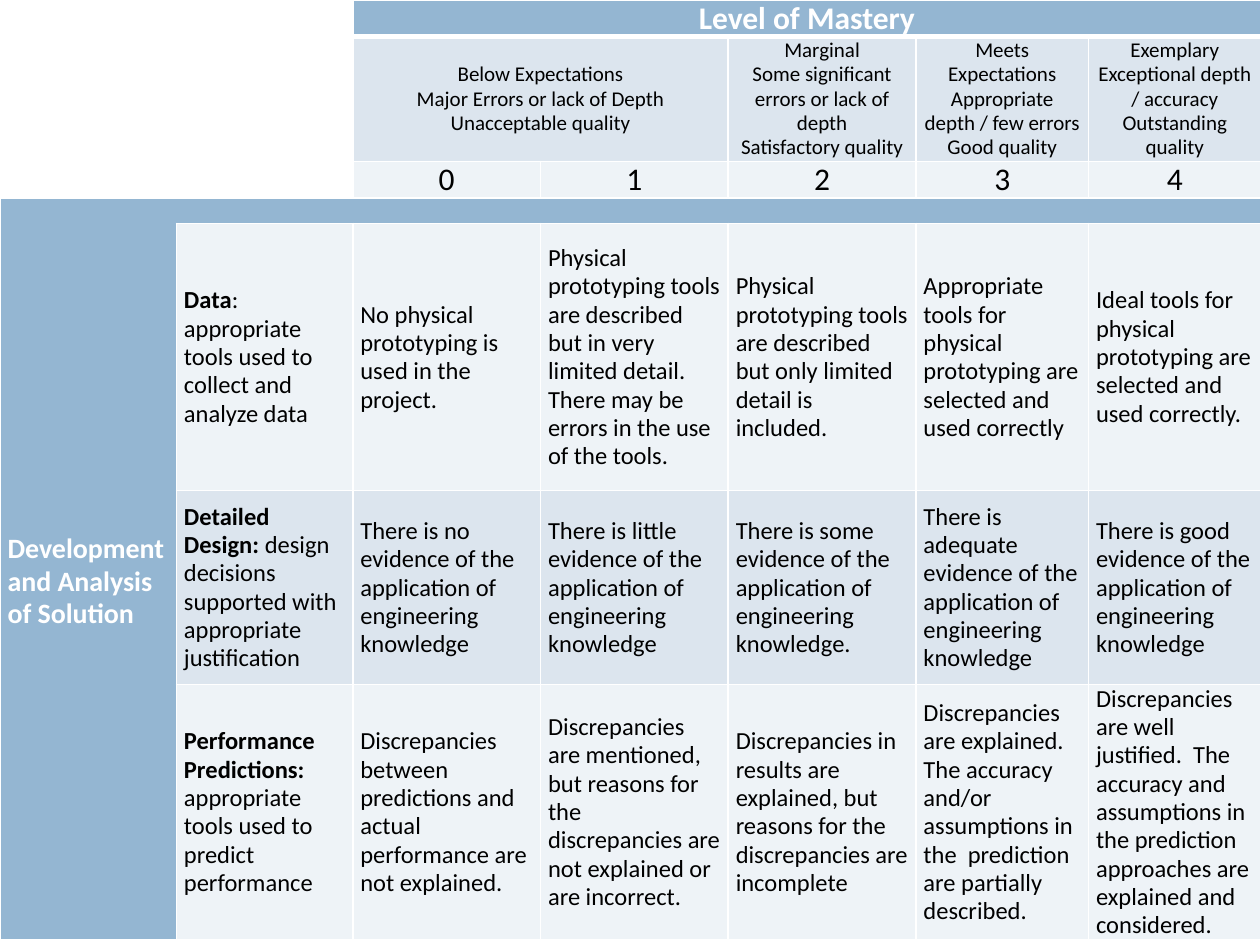
"""Build a one-slide grading rubric as a table of mastery levels."""
from lxml import etree
from pptx import Presentation, util as u
from pptx.dml.color import RGBColor
from pptx.enum import text
from pptx.oxml import ns

HEADING = "Level of Mastery"
SECTION = "Development and Analysis of Solution"
EXPECTATIONS = [
    (2, ["Below Expectations", "Major Errors or lack of Depth", "Unacceptable quality"]),
    (4, ["Marginal", "Some significant errors or lack of depth", "Satisfactory quality"]),
    (5, ["Meets Expectations", "Appropriate depth / few errors", "Good quality"]),
    (6, ["Exemplary", "Exceptional depth / accuracy", "Outstanding quality"]),
]
SCORES = ["0", "1", "2", "3", "4"]
CRITERIA = [
    ("Data", ": appropriate tools used to collect and analyze data", [
        "No physical prototyping is used in the project.",
        "Physical prototyping tools are described but in very limited detail.  "
        "There may be errors in the use of the tools.",
        "Physical prototyping tools are described but only limited detail is included.",
        "Appropriate tools for physical prototyping are selected and used correctly",
        "Ideal tools for physical prototyping are selected and used correctly.",
    ]),
    ("Detailed Design:", " design decisions supported with appropriate justification", [
        "There is no evidence of the application of engineering knowledge",
        "There is little evidence of the application of engineering knowledge",
        "There is some evidence of the application of engineering knowledge.",
        "There is adequate evidence of the application of engineering knowledge",
        "There is good evidence of the application of engineering knowledge",
    ]),
    ("Performance Predictions: ", "appropriate tools used to predict performance", [
        "Discrepancies between predictions and actual performance are not explained.",
        "Discrepancies are mentioned, but reasons for the discrepancies are not "
        "explained or are incorrect.",
        "Discrepancies in results are explained, but reasons for the discrepancies "
        "are incomplete",
        "Discrepancies are explained.  The accuracy and/or assumptions in the  "
        "prediction are partially described.",
        "Discrepancies are well justified.  The accuracy and assumptions in the "
        "prediction approaches are explained and considered.",
    ]),
]

COLORS = {"accent": "94B6D2", "band": "DCE5EE", "pale": "EEF3F7",
          "white": "FFFFFF", "black": "000000"}
COLUMNS = [1.4, 1.4, 1.49, 1.49, 1.49, 1.37, 1.37]
ROWS = [0.28, 0.99, 0.28, 0.19, 2.12, 1.54, 2.0]
ROW_FILLS = ["accent", "band", "pale", "accent", "pale", "band", "pale"]
MERGES = [((0, 0), (2, 1)), ((0, 2), (0, 6)), ((1, 2), (1, 3)),
          ((3, 0), (3, 6)), ((4, 0), (6, 0))]
FIRST_LEVEL, SCORE_ROW, BAND_ROW, FIRST_CRITERION = 2, 2, 3, 4

CENTER, LEFT = text.PP_ALIGN.CENTER, text.PP_ALIGN.LEFT
HEADING_STYLE = {"size": 18, "color": "white", "bold": True, "align": CENTER, "after": 6}
EXPECTATION_STYLE = {"size": 12, "align": CENTER, "after": 0}
SCORE_STYLE = {"size": 18, "align": CENTER, "after": 0}
SECTION_STYLE = {"size": 16, "color": "white", "bold": True, "align": LEFT, "after": 6}
BODY_STYLE = {"size": 14, "align": LEFT, "after": 6}
CELL_FORMAT = {"margin_left": u.Inches(0.06), "margin_right": u.Inches(0.06),
               "margin_top": 0, "margin_bottom": 0,
               "vertical_anchor": text.MSO_ANCHOR.MIDDLE}


def rgb(name):
    return RGBColor.from_string(COLORS[name])


def write(cell, paragraphs, style):
    """Fill a cell; each paragraph is a list of (text, bold) runs."""
    frame = cell.text_frame
    for index, runs in enumerate(paragraphs):
        paragraph = frame.add_paragraph() if index else frame.paragraphs[0]
        layout = {"alignment": style["align"], "line_spacing": 0.95,
                  "space_before": u.Pt(0), "space_after": u.Pt(style["after"])}
        for key, value in layout.items():
            setattr(paragraph, key, value)
        for words, bold in runs:
            run = paragraph.add_run()
            run.text = words
            font = {"name": "Calibri", "size": u.Pt(style["size"]), "bold": bold}
            for key, value in font.items():
                setattr(run.font, key, value)
            run.font.color.rgb = rgb(style.get("color", "black"))


def write_plain(cell, lines, style):
    write(cell, [[(line, style.get("bold", False))] for line in lines], style)


def add_borders(cell, widths):
    """Draw white cell edges; a width of zero hides the edge."""
    properties = cell._tc.get_or_add_tcPr()
    for position, (edge, width) in enumerate(widths.items()):
        line = etree.Element(ns.qn(f"a:ln{edge}"), w=str(u.Pt(width)))
        if width:
            fill = etree.SubElement(line, ns.qn("a:solidFill"))
            etree.SubElement(fill, ns.qn("a:srgbClr"), val=COLORS["white"])
        else:
            etree.SubElement(line, ns.qn("a:noFill"))
        properties.insert(position, line)


def format_cell(cell, row, column):
    in_corner = row < BAND_ROW and column < FIRST_LEVEL
    in_section = row >= FIRST_CRITERION and column == 0
    for key, value in CELL_FORMAT.items():
        setattr(cell, key, value)
    cell.fill.solid()
    fill = "white" if in_corner else "accent" if in_section else ROW_FILLS[row]
    cell.fill.fore_color.rgb = rgb(fill)
    widths = dict.fromkeys("LRTB", 0 if in_corner else 1)
    if row == 0 and not in_corner:
        widths["B"] = 3
    if row == 1 and not in_corner:
        widths["T"] = 3
    if row == BAND_ROW:
        widths["B"] = 0
    if in_section:
        widths["T"] = 0
    add_borders(cell, widths)
    if not cell.text_frame.text:
        empty = cell.text_frame.paragraphs[0]._p
        etree.SubElement(empty, ns.qn("a:endParaRPr"), sz="1200")


def main():
    deck = Presentation()
    deck.slide_width, deck.slide_height = u.Inches(10), u.Inches(7.5)
    slide = deck.slides.add_slide(deck.slide_layouts[6])
    rubric = slide.shapes.add_table(len(ROWS), len(COLUMNS), 0, 0,
                                    u.Inches(10), u.Inches(sum(ROWS))).table
    rubric.first_row = rubric.horz_banding = False
    for column, width in zip(rubric.columns, COLUMNS):
        column.width = u.Inches(width)
    for row, height in zip(rubric.rows, ROWS):
        row.height = u.Inches(height)
    for start, end in MERGES:
        rubric.cell(*start).merge(rubric.cell(*end))

    write_plain(rubric.cell(0, FIRST_LEVEL), [HEADING], HEADING_STYLE)
    write_plain(rubric.cell(FIRST_CRITERION, 0), [SECTION], SECTION_STYLE)
    for column, lines in EXPECTATIONS:
        write_plain(rubric.cell(1, column), lines, EXPECTATION_STYLE)
    for column, score in enumerate(SCORES, FIRST_LEVEL):
        write_plain(rubric.cell(SCORE_ROW, column), [score], SCORE_STYLE)
    for row, (name, description, levels) in enumerate(CRITERIA, FIRST_CRITERION):
        write(rubric.cell(row, 1), [[(name, True), (description, False)]], BODY_STYLE)
        for column, level in enumerate(levels, FIRST_LEVEL):
            write_plain(rubric.cell(row, column), [level], BODY_STYLE)

    for row in range(len(ROWS)):
        for column in range(len(COLUMNS)):
            format_cell(rubric.cell(row, column), row, column)
    deck.save("out.pptx")


if __name__ == "__main__":
    main()
